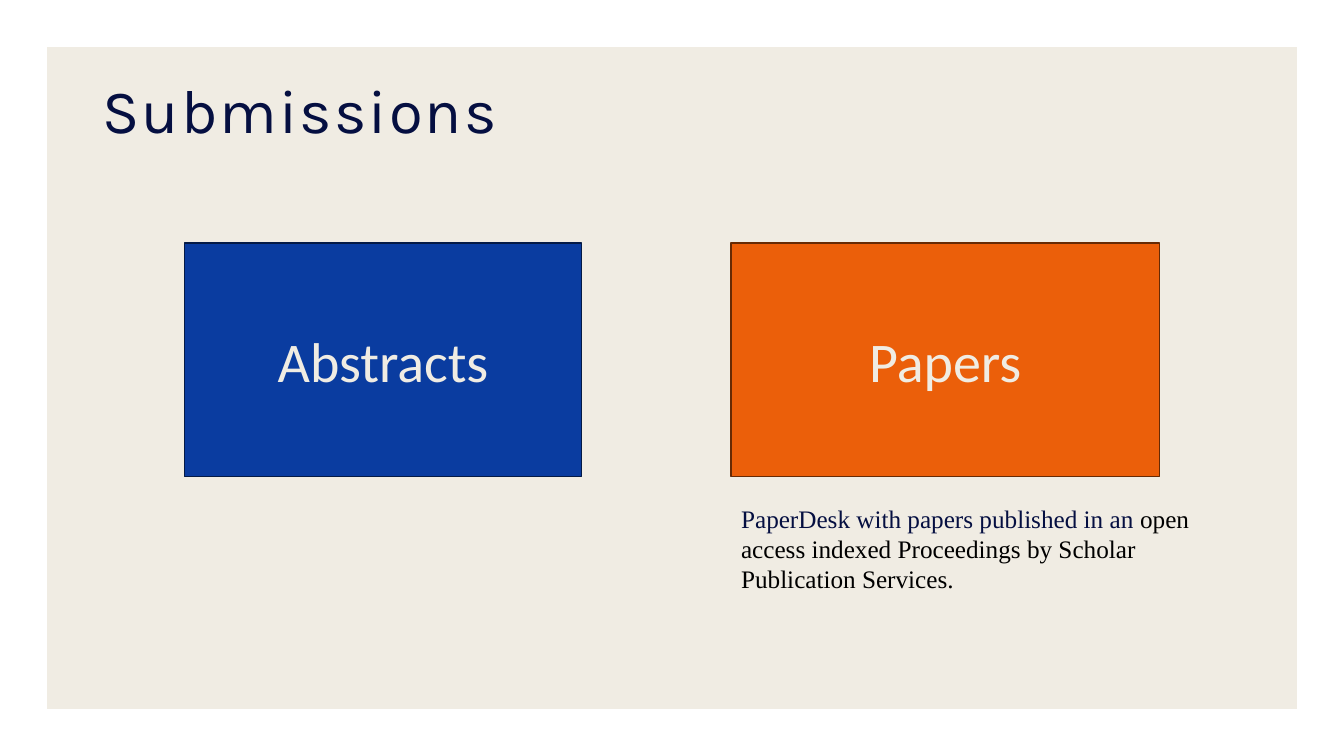
from pptx import Presentation
from pptx import util as u
from pptx.dml.color import RGBColor
from pptx.enum import shapes, text
from pptx.oxml.ns import qn

COLORS = {
    "paper": "F0ECE3",
    "frame": "FFFFFF",
    "navy": "050F41",
    "blue": "0A3CA0",
    "blue_edge": "041A46",
    "orange": "EB5F0A",
    "orange_edge": "672A04",
    "black": "000000",
}
WIDTH, HEIGHT = 13.33, 7.5
CARD_TOP, CARD_HEIGHT = 2.41, 2.32
CARDS = [
    ("Abstracts", 1.83, 3.94, "blue"),
    ("Papers", 7.25, 4.25, "orange"),
]
NOTE = [
    ("PaperDesk with papers published in an ", "navy"),
    ("open access indexed Proceedings by Scholar Publication Services.", "black"),
]


def color(name):
    return RGBColor.from_string(COLORS[name])


def inches(box):
    return [u.Inches(length) for length in box]


def write(shape, spans, font, size, anchor="TOP", align="LEFT", inset=None, leading=None, tracking=None):
    frame = shape.text_frame
    frame.word_wrap = True
    frame.vertical_anchor = getattr(text.MSO_ANCHOR, anchor)
    if inset is not None:
        frame.margin_left = frame.margin_right = u.Inches(inset)
        frame.margin_top = frame.margin_bottom = u.Inches(inset)
    para = frame.paragraphs[0]
    para.alignment = getattr(text.PP_ALIGN, align)
    if leading:
        para.line_spacing = leading
    for words, tint in spans:
        span = para.add_run()
        span.text = words
        span.font.name = font
        span.font.size = u.Pt(size)
        span.font.color.rgb = color(tint)
        if tracking:
            span._r.get_or_add_rPr().set("spc", str(round(tracking * 100)))


def add_rectangle(page, box, edge, weight, fill=None):
    rectangle = page.shapes.add_shape(shapes.MSO_SHAPE.RECTANGLE, *inches(box))
    rectangle.shadow.inherit = False
    if fill:
        rectangle.fill.solid()
        rectangle.fill.fore_color.rgb = color(fill)
    else:
        rectangle.fill.background()
    rectangle.line.color.rgb = color(edge)
    rectangle.line.width = u.Pt(weight)
    return rectangle


def add_frame(page, margin):
    page.background.fill.solid()
    page.background.fill.fore_color.rgb = color("paper")
    box = (margin, margin, WIDTH - 2 * margin, HEIGHT - 2 * margin)
    frame = add_rectangle(page, box, "frame", 34)
    line = frame.line._get_or_add_ln()
    line.append(line.makeelement(qn("a:miter"), {"lim": "800000"}))


def add_title(page, box, title):
    heading = page.shapes.add_textbox(*inches(box))
    write(heading, [(title, "navy")], "Karla", 44, anchor="MIDDLE", leading=0.9, tracking=1.5)


def add_card(page, box, label, fill):
    card = add_rectangle(page, box, fill + "_edge", 1, fill)
    write(card, [(label, "paper")], "Calibri", 40, anchor="MIDDLE", align="CENTER")


def add_note(page, box):
    note = page.shapes.add_textbox(*inches(box))
    write(note, NOTE, "Times New Roman", 18, inset=0)


def main():
    deck = Presentation()
    deck.slide_width, deck.slide_height = inches((WIDTH, HEIGHT))
    page = deck.slides.add_slide(deck.slide_layouts[6])
    add_frame(page, 0.23)
    add_title(page, (0.92, 0.4, 11.5, 1.45), "Submissions")
    for label, left, width, fill in CARDS:
        add_card(page, (left, CARD_TOP, width, CARD_HEIGHT), label, fill)
    add_note(page, (left + 0.1, CARD_TOP + CARD_HEIGHT + 0.26, width + 0.2, 1.51))
    deck.save("out.pptx")


if __name__ == "__main__":
    main()
